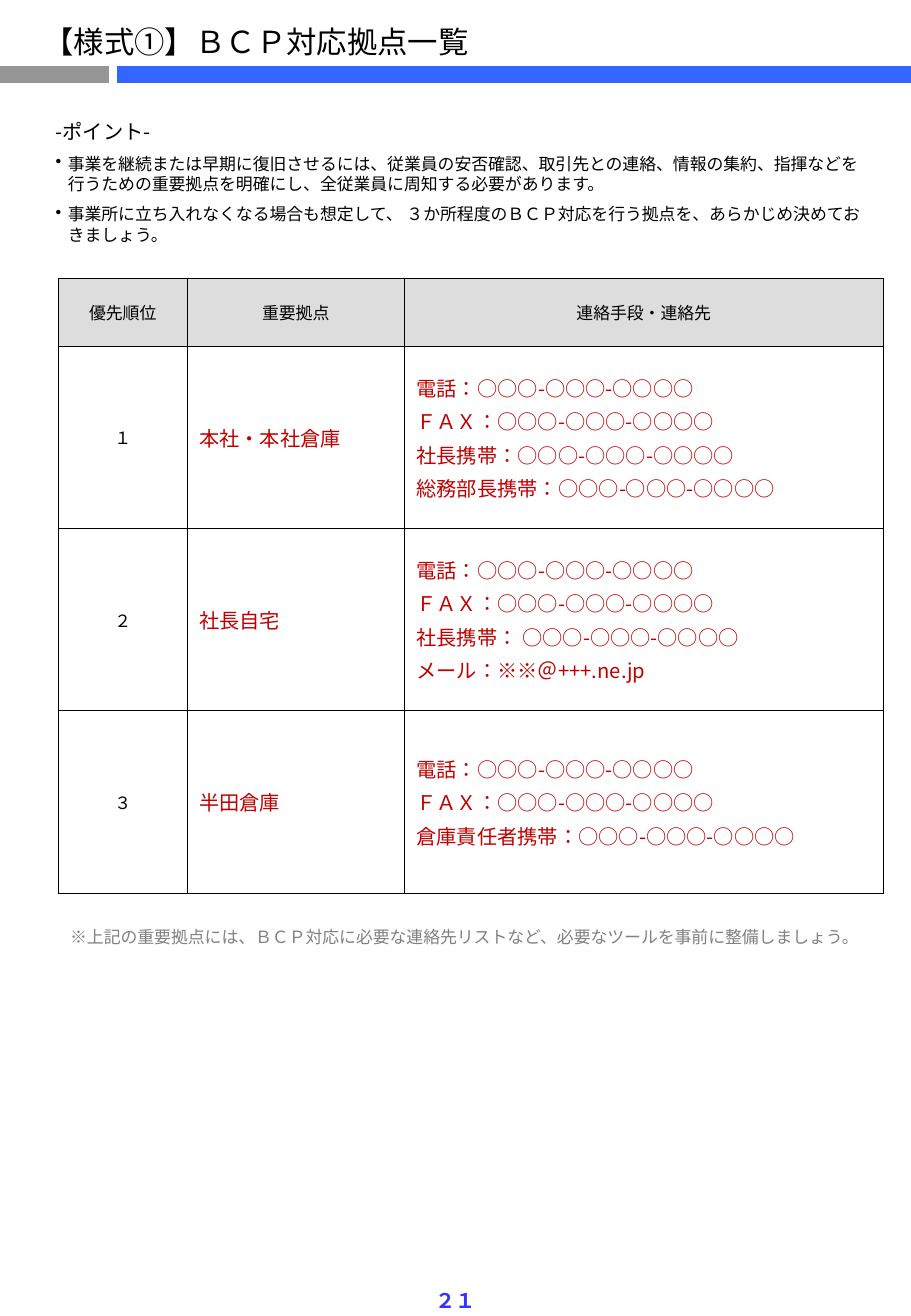
from lxml import etree
from pptx import Presentation
from pptx import util as u
from pptx.dml.color import RGBColor
from pptx.enum import lang, shapes, text
from pptx.oxml.ns import qn

PX = 9144  # one px is a hundredth of an inch
THEME = {
    "font": "Noto Sans CJK JP",
    "black": "000000", "note": "808080", "entry": "C00000", "page": "3333FF",
    "header": "DDDDDD", "grey_bar": "969696", "blue_bar": "3366FF",
    "title": 18, "large": 12, "body": 10, "bar": 10, "border": 0.5,
}
CENTER = text.PP_ALIGN.CENTER
LEFT = text.PP_ALIGN.LEFT


def add_run(paragraph, words, size, color, bold=False):
    run = paragraph.add_run()
    run.text = words
    run.font.size = u.Pt(THEME[size])
    run.font.bold = bold
    run.font.color.rgb = RGBColor.from_string(THEME[color])
    run.font.name = THEME["font"]
    run.font.language_id = lang.MSO_LANGUAGE_ID.JAPANESE
    east_asian = etree.SubElement(run.font._element, qn("a:ea"))
    east_asian.set("typeface", THEME["font"])


def add_text_frame(left, top, width, height, wrap=True):
    box = slide.shapes.add_textbox(left * PX, top * PX, width * PX, height * PX)
    box.text_frame.word_wrap = wrap
    box.text_frame.auto_size = text.MSO_AUTO_SIZE.SHAPE_TO_FIT_TEXT
    return box.text_frame


presentation = Presentation()
presentation.slide_width = 750 * PX
presentation.slide_height = 1083 * PX
slide = presentation.slides.add_slide(presentation.slide_layouts[6])

# Two-colour bar under the title
for start, end, color in [(0, 90, "grey_bar"), (96, 750, "blue_bar")]:
    bar = slide.shapes.add_connector(
        shapes.MSO_CONNECTOR.STRAIGHT, start * PX, 61 * PX, end * PX, 61 * PX)
    bar.line.color.rgb = RGBColor.from_string(THEME[color])
    bar.line.width = u.Pt(THEME["bar"])
    etree.SubElement(bar._element.spPr, qn("a:effectLst"))

# Title
title = add_text_frame(26, 14, 374, 40, wrap=False)
add_run(title.paragraphs[0], "【様式①】ＢＣＰ対応拠点一覧", "title", "black")

# Points with hanging bullets
points = add_text_frame(36, 93, 689, 114)
POINTS = [
    ("-ポイント-", "large", False),
    ("事業を継続または早期に復旧させるには、従業員の安否確認、取引先との連絡、情報の集約、指揮などを"
     "行うための重要拠点を明確にし、全従業員に周知する必要があります。", "body", True),
    ("事業所に立ち入れなくなる場合も想定して、 ３か所程度のＢＣＰ対応を行う拠点を、"
     "あらかじめ決めておきましょう。", "body", True),
]
for index, (words, size, bulleted) in enumerate(POINTS):
    paragraph = points.add_paragraph() if index else points.paragraphs[0]
    paragraph.space_after = u.Pt(6)
    properties = paragraph._p.get_or_add_pPr()
    properties.set("marL", str(10 * PX))
    properties.set("indent", str(-10 * PX))
    if bulleted:
        etree.SubElement(properties, qn("a:buChar")).set("char", "•")
    add_run(paragraph, words, size, "black")

# Table of sites: each cell is a list of lines
NUMBER = "○○○-○○○-○○○○"
PHONE_AND_FAX = [f"電話：{NUMBER}", f"ＦＡＸ：{NUMBER}"]
ROWS = [
    [["優先順位"], ["重要拠点"], ["連絡手段・連絡先"]],
    [["１"], ["本社・本社倉庫"],
     PHONE_AND_FAX + [f"社長携帯：{NUMBER}", f"総務部長携帯：{NUMBER}"]],
    [["２"], ["社長自宅"],
     PHONE_AND_FAX + [f"社長携帯： {NUMBER}", "メール：※※＠+++.ne.jp"]],
    [["３"], ["半田倉庫"],
     PHONE_AND_FAX + [f"倉庫責任者携帯：{NUMBER}"]],
]
COLUMN_WIDTHS = [106, 179, 394]
ROW_HEIGHTS = [56, 150, 150, 150]
table = slide.shapes.add_table(
    len(ROWS), len(COLUMN_WIDTHS), 48 * PX, 229 * PX,
    sum(COLUMN_WIDTHS) * PX, sum(ROW_HEIGHTS) * PX).table
table.first_row = False
table.horz_banding = False
for column, width in zip(table.columns, COLUMN_WIDTHS):
    column.width = width * PX
for row, height in zip(table.rows, ROW_HEIGHTS):
    row.height = height * PX

for row_index, row in enumerate(ROWS):
    for column_index, lines in enumerate(row):
        cell = table.cell(row_index, column_index)
        cell.vertical_anchor = text.MSO_ANCHOR.MIDDLE
        cell.margin_left = cell.margin_right = 10 * PX
        cell.margin_top = cell.margin_bottom = 5 * PX

        # Borders come before the fill in the cell properties
        properties = cell._tc.get_or_add_tcPr()
        for side in ("lnL", "lnR", "lnT", "lnB"):
            border = etree.SubElement(properties, qn(f"a:{side}"))
            border.set("w", str(u.Pt(THEME["border"])))
            fill = etree.SubElement(border, qn("a:solidFill"))
            etree.SubElement(fill, qn("a:srgbClr")).set("val", THEME["black"])
        if row_index == 0:
            cell.fill.solid()
            cell.fill.fore_color.rgb = RGBColor.from_string(THEME["header"])
        else:
            cell.fill.background()

        is_label = row_index == 0 or column_index == 0
        size, color = ("body", "black") if is_label else ("large", "entry")
        for index, words in enumerate(lines):
            frame = cell.text_frame
            paragraph = frame.add_paragraph() if index else frame.paragraphs[0]
            paragraph.alignment = CENTER if is_label else LEFT
            paragraph.space_before = u.Pt(THEME[size] * 0.2)
            add_run(paragraph, words, size, color)

# Note under the table
note = add_text_frame(48, 758, 677, 27)
add_run(note.paragraphs[0],
        "※上記の重要拠点には、ＢＣＰ対応に必要な連絡先リストなど、必要なツールを事前に整備しましょう。",
        "body", "note")

# Page number
page = add_text_frame(348, 1055, 54, 31, wrap=False)
page.paragraphs[0].alignment = CENTER
add_run(page.paragraphs[0], "２１", "large", "page", bold=True)

presentation.save("out.pptx")
